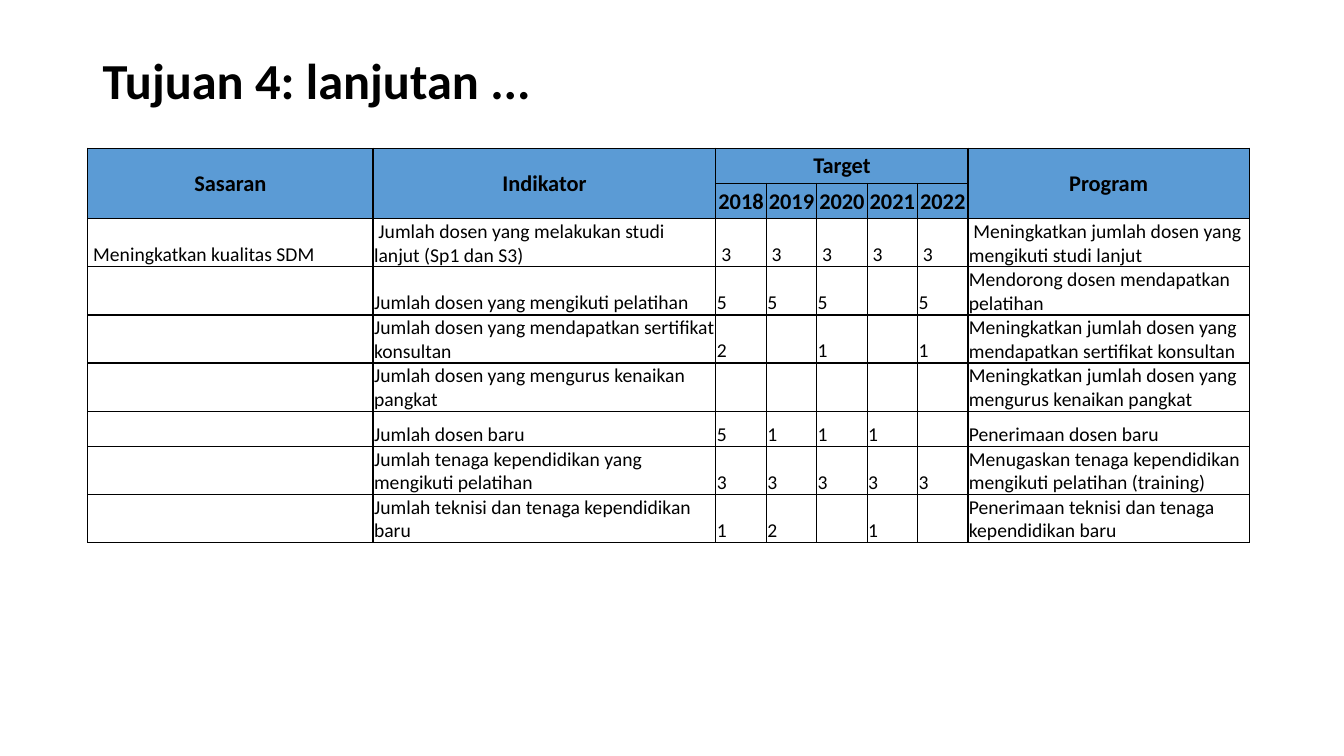
from dataclasses import dataclass

from lxml.etree import SubElement
from pptx import Presentation
from pptx.dml.color import RGBColor
from pptx.enum.text import MSO_ANCHOR, PP_ALIGN
from pptx.oxml.ns import qn
from pptx.util import Inches, Pt


@dataclass(frozen=True)
class Theme:
    font: str = "Calibri"
    ink: str = "000000"
    header_fill: str = "5B9BD5"
    title_size: int = 36
    header_size: int = 16
    body_size: int = 14
    border_width: int = 1


THEME = Theme()
COLUMN_WIDTHS = [2.83, 3.4] + [0.5] * 5 + [2.79]
ROW_HEIGHT = 0.35
HEADER_ROWS = [
    ["Sasaran", "Indikator", "Target", "", "", "", "", "Program"],
    ["", "", "2018", "2019", "2020", "2021", "2022", ""],
]
BODY_ROWS = [
    [" Meningkatkan kualitas SDM",
     " Jumlah dosen yang melakukan studi lanjut (Sp1 dan S3)",
     " 3", " 3", " 3", " 3", " 3",
     " Meningkatkan jumlah dosen yang mengikuti studi lanjut"],
    ["", "Jumlah dosen yang mengikuti pelatihan", "5", "5", "5", "", "5",
     "Mendorong dosen mendapatkan pelatihan"],
    ["", "Jumlah dosen yang mendapatkan sertifikat konsultan", "2", "", "1", "", "1",
     "Meningkatkan jumlah dosen yang mendapatkan sertifikat konsultan"],
    ["", "Jumlah dosen yang mengurus kenaikan pangkat", "", "", "", "", "",
     "Meningkatkan jumlah dosen yang mengurus kenaikan pangkat"],
    ["", "Jumlah dosen baru", "5", "1", "1", "1", "", "Penerimaan dosen baru"],
    ["", "Jumlah tenaga kependidikan yang mengikuti pelatihan", "3", "3", "3", "3", "3",
     "Menugaskan tenaga kependidikan mengikuti pelatihan (training)"],
    ["", "Jumlah teknisi dan tenaga kependidikan baru", "1", "2", "", "1", "",
     "Penerimaan teknisi dan tenaga kependidikan baru"],
]
MERGES = [((0, 0), (1, 0)), ((0, 1), (1, 1)), ((0, 2), (0, 6)), ((0, 7), (1, 7))]


def set_attributes(target, values):
    for name, value in values.items():
        setattr(target, name, value)


def write_text(para, text, size, bold):
    span = para.add_run()
    span.text = text
    set_attributes(span.font, {"name": THEME.font, "size": Pt(size), "bold": bold})
    span.font.color.rgb = RGBColor.from_string(THEME.ink)


def add_title(page, text):
    box = page.shapes.add_textbox(Inches(0.92), Inches(0.4), Inches(11.5), Inches(0.86))
    set_attributes(box.text_frame, {"word_wrap": True, "vertical_anchor": MSO_ANCHOR.MIDDLE})
    para = box.text_frame.paragraphs[0]
    para.line_spacing = 0.9
    write_text(para, text, THEME.title_size, True)


def add_borders(cell):
    properties = cell._tc.get_or_add_tcPr()
    for side in ("a:lnL", "a:lnR", "a:lnT", "a:lnB"):
        line = SubElement(properties, qn(side), w=str(Pt(THEME.border_width)))
        fill = SubElement(line, qn("a:solidFill"))
        SubElement(fill, qn("a:srgbClr"), val=THEME.ink)


def format_cell(cell, text, is_header):
    set_attributes(cell, {
        "margin_left": Inches(0.01),
        "margin_right": Inches(0.01),
        "margin_top": Inches(0.01),
        "margin_bottom": Inches(0),
        "vertical_anchor": MSO_ANCHOR.MIDDLE if is_header else MSO_ANCHOR.BOTTOM,
    })
    add_borders(cell)
    if is_header:
        cell.fill.solid()
        cell.fill.fore_color.rgb = RGBColor.from_string(THEME.header_fill)
    else:
        cell.fill.background()
    if text:
        para = cell.text_frame.paragraphs[0]
        para.alignment = PP_ALIGN.CENTER if is_header else PP_ALIGN.LEFT
        size = THEME.header_size if is_header else THEME.body_size
        write_text(para, text, size, is_header)


def add_target_table(page):
    rows = HEADER_ROWS + BODY_ROWS
    frame = page.shapes.add_table(
        len(rows), len(COLUMN_WIDTHS), Inches(0.87), Inches(1.47),
        Inches(sum(COLUMN_WIDTHS)), Inches(ROW_HEIGHT * len(rows)))
    table = frame.table
    set_attributes(table, {"first_row": False, "horz_banding": False})
    for column, width in zip(table.columns, COLUMN_WIDTHS):
        column.width = Inches(width)
    for row_index, texts in enumerate(rows):
        table.rows[row_index].height = Inches(ROW_HEIGHT)
        for column_index, text in enumerate(texts):
            format_cell(table.cell(row_index, column_index), text,
                        row_index < len(HEADER_ROWS))
    for first, last in MERGES:
        table.cell(*first).merge(table.cell(*last))


def main():
    deck = Presentation()
    set_attributes(deck, {"slide_width": Inches(13.33), "slide_height": Inches(7.5)})
    page = deck.slides.add_slide(deck.slide_layouts[6])
    add_title(page, "Tujuan 4: lanjutan ...")
    add_target_table(page)
    deck.save("out.pptx")


if __name__ == "__main__":
    main()
